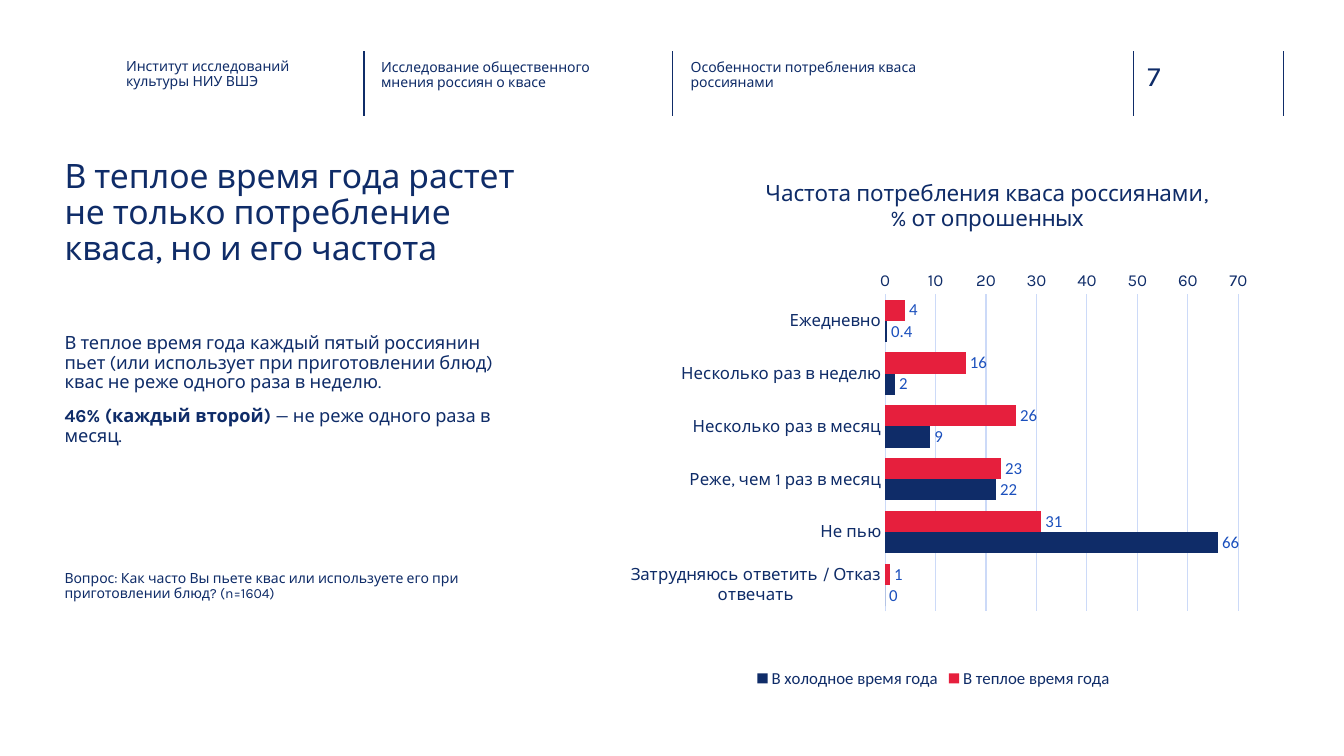
from dataclasses import dataclass

from lxml import etree
from pptx import Presentation
from pptx.chart.data import CategoryChartData
from pptx.dml.color import RGBColor
from pptx.enum.chart import XL_CHART_TYPE, XL_LABEL_POSITION, XL_LEGEND_POSITION, XL_TICK_MARK
from pptx.enum.shapes import MSO_CONNECTOR
from pptx.enum.text import MSO_ANCHOR, MSO_AUTO_SIZE, PP_ALIGN
from pptx.oxml.ns import qn
from pptx.util import Inches, Pt

BAR = XL_CHART_TYPE.BAR_CLUSTERED
OUTSIDE = XL_LABEL_POSITION.OUTSIDE_END
BOTTOM = XL_LEGEND_POSITION.BOTTOM
NO_TICK = XL_TICK_MARK.NONE
STRAIGHT = MSO_CONNECTOR.STRAIGHT
TOP = MSO_ANCHOR.TOP
NO_FIT = MSO_AUTO_SIZE.NONE
LEFT, CENTER = PP_ALIGN.LEFT, PP_ALIGN.CENTER


@dataclass(frozen=True)
class Theme:
    font: str = "Karla"
    chart_font: str = "Calibri"
    navy: str = "0F2C68"
    red: str = "E61F3D"
    grid: str = "CCDAF8"
    label: str = "1B50BD"
    small: int = 10
    axis: int = 12
    body: int = 13
    chart_title: int = 16
    number: int = 20
    title: int = 24


T = Theme()


def rgb(value):
    return RGBColor.from_string(value)


def set_font(font, size, color=T.navy, name=T.font, bold=False):
    font.size, font.name, font.bold = Pt(size), name, bold
    font.color.rgb = rgb(color)


def write(tf, paragraphs, size, spacing=0.9, before=10, align=LEFT):
    """Fill a text frame; a paragraph is a string or a list of (text, bold) runs."""
    for i, runs in enumerate(paragraphs):
        p = tf.add_paragraph() if i else tf.paragraphs[0]
        p.alignment, p.line_spacing = align, spacing
        p.space_before = Pt(before if i else 0)
        for text, bold in [(runs, False)] if isinstance(runs, str) else runs:
            for j, line in enumerate(text.split("\n")):
                if j:
                    p.add_line_break()
                r = p.add_run()
                r.text = line
                set_font(r.font, size, bold=bold)


def place_text(sp, box, paragraphs, size, **fmt):
    sp.left, sp.top, sp.width, sp.height = (Inches(v) for v in box)
    tf = sp.text_frame
    tf.word_wrap, tf.auto_size, tf.vertical_anchor = True, NO_FIT, TOP
    tf.margin_left = tf.margin_top = tf.margin_right = tf.margin_bottom = 0
    write(tf, paragraphs, size, **fmt)


def add_text(s, box, paragraphs, size, **fmt):
    sp = s.shapes.add_textbox(*(Inches(v) for v in box))
    place_text(sp, box, paragraphs, size, **fmt)


def add_rule(s, x, top, height):
    line = s.shapes.add_connector(STRAIGHT, Inches(x), Inches(top), Inches(x), Inches(top + height))
    line.line.color.rgb = rgb(T.navy)
    line.line.width = Pt(1)
    etree.SubElement(line.element.spPr, qn("a:effectLst"))


def add_header(s, box, captions, number):
    left, top, width, height = box
    for dx in (2.36, 5.42, 9.99, width):
        add_rule(s, left + dx, top, height)
    for (dx, dy, w), text in zip(((0, 0.08, 2.08), (2.53, 0.09, 2.26), (5.6, 0.09, 2.26)), captions):
        add_text(s, (left + dx, top + dy, w, 0.45), [text], T.small)
    add_text(s, (left + 10.13, top + 0.07, 0.73, 0.34), [number], T.number, spacing=1)


def add_story(s, box, title, paragraphs, question):
    left, top, width, height = box
    text_width = width - 0.43
    place_text(s.shapes.title, (left, top, width, 1.51), [title], T.title)
    body = s.placeholders[1]
    place_text(body, (left, top + 1.73, text_width, 1.92), paragraphs, T.body)
    for p in body.text_frame.paragraphs:
        pPr = p._p.get_or_add_pPr()
        pPr.set("marL", "0")
        pPr.set("indent", "0")
        etree.SubElement(pPr, qn("a:buNone"))
    add_text(s, (left, top + height - 0.61, text_width, 0.61), [question], T.small)


def set_layout(parent, index, **values):
    """Pin a chart part at shares of the chart's size."""
    for old in parent.findall(qn("c:layout")):
        parent.remove(old)
    layout = etree.Element(qn("c:layout"))
    manual = etree.SubElement(layout, qn("c:manualLayout"))
    for key, value in values.items():
        etree.SubElement(manual, qn("c:" + key)).set("val", str(value))
    parent.insert(index, layout)


def format_axes(chart):
    cat, val = chart.category_axis, chart.value_axis
    cat.reverse_order = True
    val.minimum_scale, val.maximum_scale, val.major_unit = 0, 70, 10
    for axis in (cat, val):
        axis.major_tick_mark = axis.minor_tick_mark = NO_TICK
        set_font(axis.tick_labels.font, T.axis)
    val.tick_labels.number_format = "0"
    val.tick_labels.number_format_is_linked = False
    val.format.line.fill.background()
    for line in (cat.format.line, val.major_gridlines.format.line):
        line.color.rgb = rgb(T.grid)
        line.width = Pt(0.75)


def add_frequency_chart(s, box, title, categories, series):
    data = CategoryChartData()
    data.categories = categories
    for name, values, _ in series:
        data.add_series(name, values)
    chart = s.shapes.add_chart(BAR, *(Inches(v) for v in box), data).chart
    set_font(chart.font, T.small, name=T.chart_font)

    write(chart.chart_title.text_frame, title, T.chart_title, before=0, align=CENTER)
    chart.chart_title.include_in_layout = False
    set_layout(chart.element.find(".//" + qn("c:title")), 1,
               xMode="edge", yMode="edge", x=0.26, y=0.03)
    set_layout(chart.element.find(".//" + qn("c:plotArea")), 0, layoutTarget="inner",
               xMode="edge", yMode="edge", x=0.432, y=0.252, w=0.495, h=0.596)
    format_axes(chart)

    plot = chart.plots[0]
    plot.gap_width, plot.overlap, plot.vary_by_categories = 50, 0, False
    for bars, (_, _, color) in zip(plot.series, series):
        bars.format.fill.solid()
        bars.format.fill.fore_color.rgb = rgb(color)
        labels = bars.data_labels
        labels.show_value, labels.position = True, OUTSIDE
        labels.number_format, labels.number_format_is_linked = "General", False
        set_font(labels.font, T.axis, T.label, T.chart_font)

    chart.has_legend = True
    chart.legend.position, chart.legend.include_in_layout = BOTTOM, False
    set_font(chart.legend.font, T.axis, name=T.chart_font)


def main():
    prs = Presentation()
    prs.slide_width, prs.slide_height = Inches(13.33), Inches(7.5)
    s = prs.slides.add_slide(prs.slide_layouts[1])
    add_header(s, (1.25, 0.51, 11.48, 0.64), [
        "Институт исследований культуры НИУ ВШЭ",
        "Исследование общественного мнения россиян о квасе",
        "Особенности потребления кваса россиянами",
    ], "7")
    add_frequency_chart(
        s, (5.72, 1.59, 7.08, 5.28),
        ["Частота потребления кваса россиянами,", "% от опрошенных"],
        ["Ежедневно", "Несколько раз в неделю", "Несколько раз в месяц",
         "Реже, чем 1 раз в месяц", "Не пью", "Затрудняюсь ответить / Отказ отвечать"],
        [("В теплое время года", (4, 16, 26, 23, 31, 1), T.red),
         ("В холодное время года", (0.4, 2, 9, 22, 66, 0), T.navy)])
    add_story(
        s, (0.64, 1.58, 4.73, 4.7),
        "В теплое время года растет\nне только потребление кваса, но и его частота",
        ["В теплое время года каждый пятый россиянин пьет (или использует при "
         "приготовлении блюд) квас не реже одного раза в неделю.",
         [("46% (каждый второй) ", True), ("— не реже одного раза в месяц.", False)]],
        "Вопрос: Как часто Вы пьете квас или используете его при приготовлении блюд? (n=1604)")
    prs.save("out.pptx")


if __name__ == "__main__":
    main()
